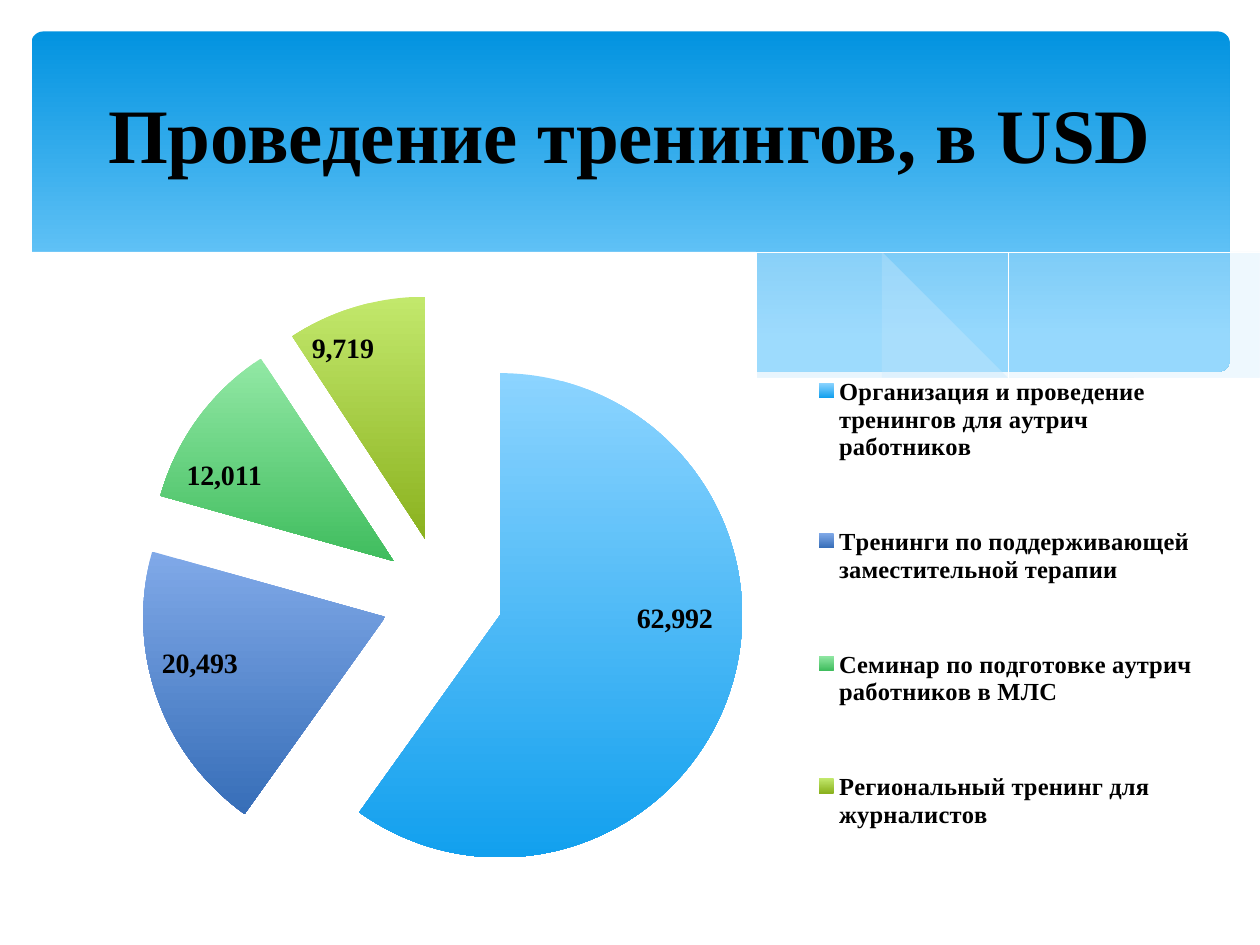
from dataclasses import dataclass

from lxml import etree
from pptx import Presentation
from pptx import util as u
from pptx.chart.data import CategoryChartData
from pptx.dml.color import RGBColor
from pptx.enum import chart as ch
from pptx.enum import shapes as sh
from pptx.enum import text
from pptx.oxml import parse_xml
from pptx.oxml.ns import nsdecls, qn

Point = tuple[float, float]


@dataclass(frozen=True)
class Theme:
    ink: str = "000000"
    paper: str = "FFFFFF"
    mist: str = "C6E7FC"
    sky_top: str = "0293E0"
    sky_bottom: str = "83D3FE"
    font: str = "Times New Roman"
    title_size: int = 44
    label_size: int = 16
    legend_size: int = 14


@dataclass(frozen=True)
class Wave:
    """Area between edges; a single edge is an open line."""
    edges: tuple[tuple[Point, ...], ...]
    color: str
    opacity: int = 100


@dataclass(frozen=True)
class Slice:
    category: str
    amount: int
    top: str
    bottom: str
    label_shift: Point


THEME = Theme()

WAVES = (
    Wave((((9.76, 2), (9.21, 2.1), (8.61, 2.23), (7.79, 2.42), (7.06, 2.57), (6.61, 2.65)),
          ((6.61, 2.65), (7.19, 2.72), (7.81, 2.77), (8.44, 2.77), (8.97, 2.7),
           (9.42, 2.59), (9.76, 2.47))), THEME.mist, 29),
    Wave((((8.93, 2.73), (8.07, 2.6), (7.06, 2.4), (6.29, 2.22), (5.55, 2.05),
           (4.89, 1.94), (4.2, 1.87), (3.61, 1.85), (2.86, 1.91)),
          ((2.86, 1.91), (3.62, 2.03), (4.49, 2.22), (5.3, 2.4), (6.18, 2.58),
           (6.95, 2.7), (7.61, 2.77), (8.18, 2.78), (8.93, 2.73))), THEME.mist, 40),
    Wave((((3.09, 1.95), (3.53, 1.89), (4.16, 1.87), (4.89, 1.9), (5.82, 2),
           (6.65, 2.13), (7.6, 2.33), (8.31, 2.51), (9.07, 2.72)),), THEME.paper),
    Wave((((6.13, 2.57), (6.72, 2.41), (7.48, 2.23), (8.36, 2.04), (9.1, 1.92),
           (9.75, 1.85)),), THEME.paper),
    Wave((((9.77, 2.46), (9.3, 2.62), (8.75, 2.73), (8.09, 2.77), (7.26, 2.72),
           (6.48, 2.62), (5.55, 2.45), (4.47, 2.2), (3.65, 2.02), (2.92, 1.9),
           (2.3, 1.85), (1.77, 1.84), (1.19, 1.87), (0.76, 1.95), (0.4, 2.05),
           (0.23, 2.13)),
          ((0.23, 3.29), (9.77, 3.29))), THEME.paper),
)

SLICES = (
    Slice("Организация и проведение тренингов для аутрич работников", 62992,
          "8CD4FF", "12A0EE", (0.05, -0.05)),
    Slice("Тренинги по поддерживающей заместительной терапии", 20493,
          "80A9E8", "376EB8", (-0.06, 0.01)),
    Slice("Семинар по подготовке аутрич работников в МЛС", 12011,
          "92E8A5", "40BD5E", (-0.06, -0.02)),
    Slice("Региональный тренинг для журналистов", 9719,
          "C2E86C", "8BB21F", (-0.04, -0.11)),
)


def rgb(color: str) -> RGBColor:
    return RGBColor.from_string(color)


def style_font(font, size: int) -> None:
    for attribute, value in {"name": THEME.font, "size": u.Pt(size), "bold": True}.items():
        setattr(font, attribute, value)
    font.color.rgb = rgb(THEME.ink)


def fill_downward(fill, top: str, bottom: str, end: float = 1) -> None:
    fill.gradient()
    fill.gradient_angle = 270
    for stop, color, position in zip(fill.gradient_stops, (top, bottom), (0, end)):
        stop.color.rgb = rgb(color)
        stop.position = position


def smooth(knots: tuple[Point, ...], steps: int = 5) -> list[Point]:
    """Points of the Catmull-Rom curve through the knots."""
    padded = (knots[0], *knots, knots[-1])
    curve = [knots[0]]
    for a, b, c, d in zip(padded, padded[1:], padded[2:], padded[3:]):
        for t in (step / steps for step in range(1, steps + 1)):
            curve.append(tuple(
                q + t / 2 * (r - p + t * (2 * p - 5 * q + 4 * r - s
                                          + t * (3 * q - p - 3 * r + s)))
                for p, q, r, s in zip(a, b, c, d)))
    return curve


def draw_header(slide) -> None:
    header = slide.shapes.add_shape(
        sh.MSO_SHAPE.ROUNDED_RECTANGLE, u.Inches(0.25), u.Inches(0.25),
        u.Inches(9.51), u.Inches(2.7))
    header.adjustments[0] = 0.034
    header.shadow.inherit = False
    header.line.fill.background()
    fill_downward(header.fill, THEME.sky_top, THEME.sky_bottom, 0.9)


def draw_wave(slide, wave: Wave) -> None:
    closed = len(wave.edges) > 1
    start, *rest = [point for edge in wave.edges for point in smooth(edge)]
    builder = slide.shapes.build_freeform(*start, scale=u.Inches(1))
    builder.add_line_segments(rest, close=closed)
    outline = builder.convert_to_shape()
    outline.shadow.inherit = False
    if not closed:
        outline.fill.background()
        outline.line.color.rgb = rgb(wave.color)
        outline.line.width = u.Pt(0.5)
        return
    outline.line.fill.background()
    outline.fill.solid()
    outline.fill.fore_color.rgb = rgb(wave.color)
    if wave.opacity < 100:
        color = outline._element.spPr.find(qn("a:solidFill"))[0]
        etree.SubElement(color, qn("a:alpha"), val=str(wave.opacity * 1000))


def manual_layout(target: str = "", **fractions: float):
    """Chart layout; with a target or a size it is measured from the chart edge."""
    modes = '<c:xMode val="edge"/><c:yMode val="edge"/>' if "w" in fractions else ""
    inner = f'<c:layoutTarget val="{target}"/>' if target else ""
    values = "".join(f'<c:{key} val="{value}"/>' for key, value in fractions.items())
    return parse_xml(f'<c:layout {nsdecls("c")}><c:manualLayout>{inner}{modes}{values}'
                     '</c:manualLayout></c:layout>')


def draw_slice(series, index: int, part: Slice) -> None:
    point = series.points[index]
    fill_downward(point.format.fill, part.top, part.bottom)
    point.format.line.fill.background()
    label = point.data_label
    style_font(label.font, THEME.label_size)
    label.position = ch.XL_LABEL_POSITION.CENTER
    shift_x, shift_y = part.label_shift
    label_xml = series._element.findall(".//" + qn("c:dLbl"))[index]
    label_xml.insert(1, manual_layout(x=shift_x, y=shift_y))


def draw_pie(slide) -> None:
    costs = CategoryChartData(number_format="#,##0")
    costs.categories = [part.category for part in SLICES]
    costs.add_series("Series 1", [part.amount for part in SLICES])
    chart = slide.shapes.add_chart(
        ch.XL_CHART_TYPE.PIE, u.Inches(0.28), u.Inches(1.86),
        u.Inches(9.45), u.Inches(5.28), costs).chart
    chart.has_title = False
    style_font(chart.font, THEME.legend_size)

    series = chart.plots[0].series[0]
    series._element.find(qn("c:tx")).addnext(
        parse_xml(f'<c:explosion {nsdecls("c")} val="25"/>'))
    for index, part in enumerate(SLICES):
        draw_slice(series, index, part)
    for leader in series._element.iter(qn("c:showLeaderLines")):
        leader.set("val", "0")

    plot_area = chart._chartSpace.chart.plotArea
    for default in plot_area.findall(qn("c:layout")):
        plot_area.remove(default)
    plot_area.insert(0, manual_layout("inner", x=0.058, y=0.09, w=0.568, h=0.91))

    chart.has_legend = True
    chart.legend.position = ch.XL_LEGEND_POSITION.RIGHT
    chart.legend.include_in_layout = True
    style_font(chart.legend.font, THEME.legend_size)
    legend_xml = chart.legend._element
    for default in legend_xml.findall(qn("c:layout")):
        legend_xml.remove(default)
    legend_xml.find(qn("c:legendPos")).addnext(
        manual_layout(x=0.645, y=0.115, w=0.34, h=0.88))


def write_title(slide) -> None:
    title = slide.shapes.title
    place = {"left": 0.5, "top": 0.37, "width": 9, "height": 1.37}
    for attribute, inches in place.items():
        setattr(title, attribute, u.Inches(inches))
    title.text_frame.text = "Проведение тренингов, в USD"
    title.text_frame.vertical_anchor = text.MSO_ANCHOR.MIDDLE
    heading = title.text_frame.paragraphs[0]
    heading.alignment = text.PP_ALIGN.CENTER
    style_font(heading.runs[0].font, THEME.title_size)
    slide.shapes._spTree.append(title._element)  # in front of the header


def main() -> None:
    deck = Presentation()
    deck.slide_width, deck.slide_height = u.Inches(10), u.Inches(7.5)
    slide = deck.slides.add_slide(deck.slide_layouts.get_by_name("Title Only"))
    draw_header(slide)
    for wave in WAVES:
        draw_wave(slide, wave)
    draw_pie(slide)
    write_title(slide)
    deck.save("out.pptx")


if __name__ == "__main__":
    main()
